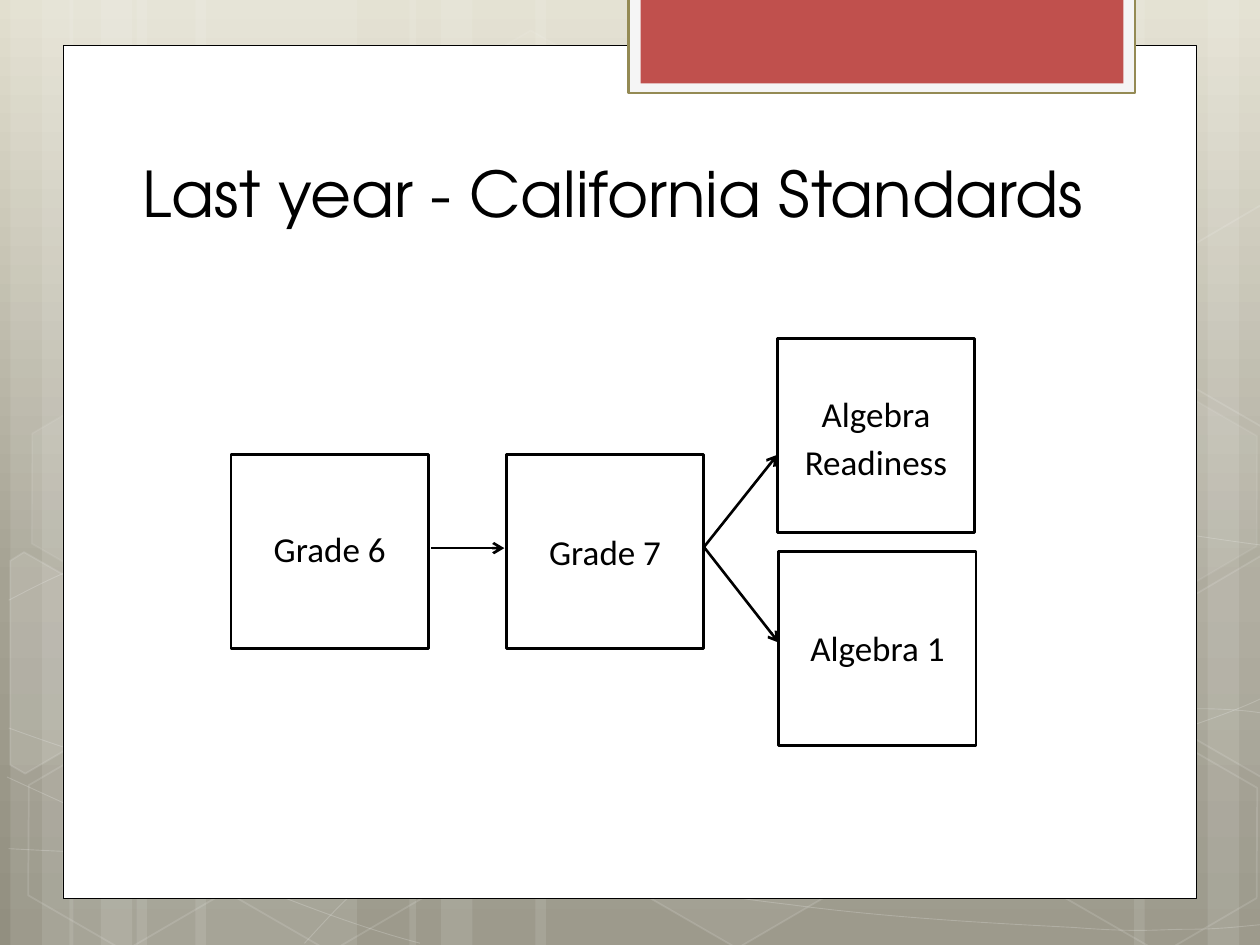
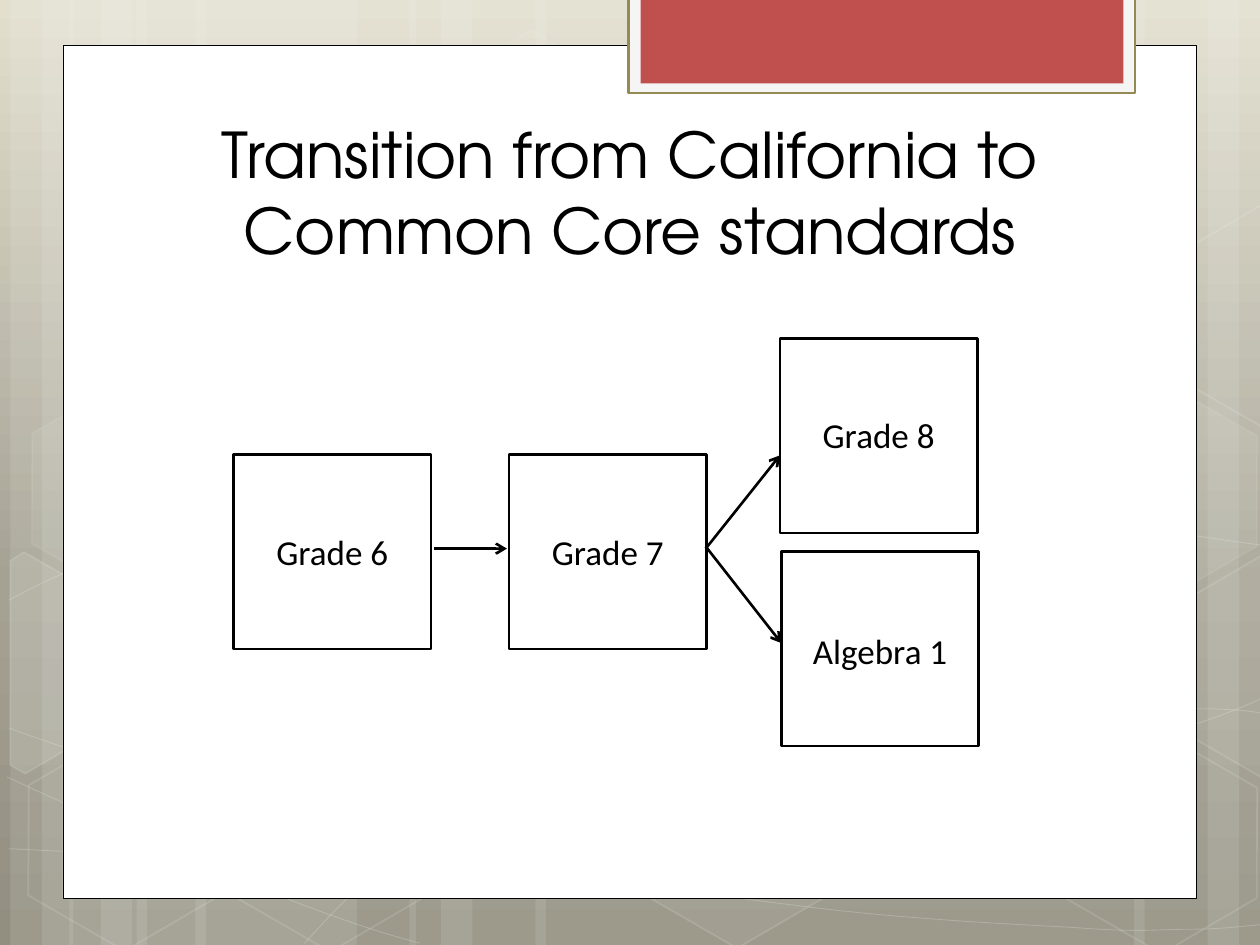
from copy import deepcopy
from dataclasses import dataclass
from math import cos, radians, sin

from lxml.etree import SubElement
from pptx import Presentation
from pptx.dml.color import RGBColor
from pptx.enum.shapes import MSO_CONNECTOR as Connector, MSO_SHAPE as Shape
from pptx.enum.text import MSO_ANCHOR as Anchor, MSO_AUTO_SIZE as AutoSize, PP_ALIGN as Align
from pptx.oxml.ns import qn
from pptx.util import Pt


@dataclass(frozen=True)
class Theme:
    ink: str = "000000"
    paper: str = "FFFFFF"
    tab_frame: str = "F5F5F5"
    tab_edge: str = "948A54"
    tab: str = "C0504D"
    backdrop: tuple = ((0, "E2DFCF"), (0.62, "A5A293"), (1, "928F80"))
    title_font: str = "TeX Gyre Adventor"
    title_size: float = 36
    box_font: str = "Calibri"
    box_size: float = 20


WIDTH, HEIGHT = 720, 540
BOX_WIDTH, BOX_HEIGHT = 112.8, 111
TILT = 30
STRIPS = ((72, 126), (0, 36), (18, 60))
WIDE_STRIPS = ((72, 222), (0, 36), (18, 60))

CURVES = (
    ((5, 485), (44, 487), (83, 489), (137, 488), (191, 487), (258, 486), (330, 479),
     (402, 472), (504, 458), (570, 444), (636, 431), (703, 409), (725, 397)),
    ((5, 343), (26, 332), (47, 321), (87, 310), (128, 300), (186, 284), (250, 279),
     (314, 274), (392, 273), (471, 279), (550, 284), (682, 307), (725, 312)),
    ((4, 444), (91, 484), (178, 523), (240, 539)),
    ((5, 416), (27, 424), (50, 432), (92, 444), (134, 454), (197, 472), (257, 485),
     (317, 497), (392, 510), (452, 517), (512, 525), (576, 528), (614, 530),
     (652, 533), (662, 531), (680, 531), (699, 531), (712, 529), (725, 528)),
    ((174, 539), (187, 525), (200, 510), (217, 498), (235, 485), (259, 470), (279, 460),
     (300, 450), (312, 446), (338, 438), (364, 431), (413, 421), (438, 416),
     (464, 411), (467, 411), (490, 410), (512, 408), (547, 405), (572, 405),
     (597, 404), (638, 405), (638, 405), (654, 405), (670, 405), (686, 405),
     (699, 405), (711, 406), (718, 407), (724, 408), (722, 407), (724, 408)),
)

HEXAGONS = (
    (240.5, 26, 4, 8), (358, 424, 6, 12), (8, 425.5, None, 12), (10, 224.5, 7, 8),
    (125.5, 426, None, 12), (542, 326, 10, 12), (600.5, 427, None, 12), (600.5, 226, 7, 8),
)
LEFT_PART = ((5.8, 320.4), (13.7, 315.4), (69.1, 347), (68.4, 410.4), (14.4, 442), (5.8, 437))
RIGHT_PART = ((666.7, 349.2), (720.7, 317.5), (726.5, 321), (726.5, 441.4),
              (721.4, 444.2), (666.7, 412.6))
UPPER_PART = tuple((x, y - 200.4) for x, y in RIGHT_PART)
CUT_HEXAGONS = ((LEFT_PART, (25.9, 385.2), 10),
                (RIGHT_PART, (709.2, 374.4), 4),
                (UPPER_PART, (709.2, 174), None))

BOX_PLACES = ((132, 259.6), (289.4, 259.6), (444.2, 193.3), (445, 315))
ARROWS = (((246.4, 313.2), (288.2, 313.2)),
          ((401.8, 313.2), (444.2, 259.9)),
          ((401.8, 312), (445, 367.2)))


def write_text(frame, text, *, font, size, color, align=Align.LEFT, spacing=None):
    frame.word_wrap = True
    frame.auto_size = AutoSize.NONE
    para = frame.paragraphs[0]
    para.alignment = align
    if spacing:
        para.line_spacing = spacing
    span = para.add_run()
    span.text = text
    span.font.name = font
    span.font.size = Pt(size)
    span.font.color.rgb = RGBColor.from_string(color)


def turn_back(points, center):
    cosine, sine = cos(radians(TILT)), sin(radians(TILT))
    middle_x, middle_y = center
    offsets = [(x - middle_x, y - middle_y) for x, y in points]
    return [(middle_x + x * cosine + y * sine, middle_y - x * sine + y * cosine)
            for x, y in offsets]


class SlideWriter:
    def __init__(self, deck, theme):
        self.deck = deck
        self.theme = theme
        self.layout = deck.slide_layouts[5]
        self.slide = None

    def start(self):
        self.slide = self.deck.slides.add_slide(self.layout)

    def paint(self, shape, fill=None, line=None, line_width=1, fill_alpha=None, line_alpha=None):
        shape.shadow.inherit = False
        for part, color in ((shape.fill, fill), (shape.line.fill, line)):
            if color:
                part.solid()
                part.fore_color.rgb = RGBColor.from_string(color)
            else:
                part.background()
        if line:
            shape.line.width = Pt(line_width)
        for query, alpha in (("a:solidFill/a:srgbClr", fill_alpha),
                             ("a:ln/a:solidFill/a:srgbClr", line_alpha)):
            if alpha is not None:
                color = shape.element.spPr.xpath(query)[0]
                SubElement(color, qn("a:alpha")).set("val", str(alpha * 1000))

    def shape(self, kind, left, top, width, height, **style):
        shape = self.slide.shapes.add_shape(kind, Pt(left), Pt(top), Pt(width), Pt(height))
        self.paint(shape, **style)
        return shape

    def outline(self, points, close, **style):
        corners = [(Pt(x), Pt(y)) for x, y in points]
        builder = self.slide.shapes.build_freeform(*corners[0], scale=1.0)
        builder.add_line_segments(corners[1:], close=close)
        outline = builder.convert_to_shape()
        self.paint(outline, **style)
        return outline

    def curve(self, knots):
        curve = self.outline(knots, False, line=self.theme.paper, line_width=0.5, line_alpha=20)
        steps = curve.element.xpath(".//a:lnTo")
        track = steps[0].getparent()
        for first in range(0, len(steps), 3):
            bend = SubElement(track, qn("a:cubicBezTo"))
            for step in steps[first:first + 3]:
                bend.append(step[0])
                track.remove(step)

    def glass(self, alpha):
        return {} if alpha is None else {"fill": self.theme.paper, "fill_alpha": alpha}

    def hexagon(self, left, top, fill_alpha, line_alpha):
        shape = self.shape(Shape.HEXAGON, left, top, 126, 109.4, line=self.theme.paper,
                           line_alpha=line_alpha, **self.glass(fill_alpha))
        shape.adjustments[0] = 0.285
        shape.rotation = TILT

    def cut_hexagon(self, points, center, fill_alpha):
        part = self.outline(turn_back(points, center), True, line=self.theme.paper,
                            line_alpha=12, **self.glass(fill_alpha))
        part.rotation = TILT

    def strips(self, origin, strips, mirrored=False):
        for offset, width in strips:
            left = origin - offset - width if mirrored else origin + offset
            strip = self.shape(Shape.RECTANGLE, left, 0, width, HEIGHT, **self.glass(10))
            strip.rotation = 180 if mirrored else 0

    def title(self, text, left, top, width, height, align):
        title = self.slide.shapes.title
        title.left, title.top, title.width, title.height = map(Pt, (left, top, width, height))
        title.text_frame.vertical_anchor = Anchor.BOTTOM
        write_text(title.text_frame, text, font=self.theme.title_font,
                   size=self.theme.title_size, color=self.theme.ink, align=align)

    def course_box(self, text, left, top, lift):
        box = self.shape(Shape.RECTANGLE, left, top, BOX_WIDTH, BOX_HEIGHT,
                         fill=self.theme.paper, line=self.theme.ink, line_width=1.5)
        frame = box.text_frame
        frame.vertical_anchor = Anchor.MIDDLE
        frame.margin_bottom = Pt(3.6 + lift)
        write_text(frame, text, font=self.theme.box_font, size=self.theme.box_size,
                   color=self.theme.ink, align=Align.CENTER, spacing=1.15)

    def arrow(self, start, end):
        arrow = self.slide.shapes.add_connector(
            Connector.STRAIGHT, *(Pt(value) for value in (*start, *end)))
        arrow.line.color.rgb = RGBColor.from_string(self.theme.ink)
        arrow.line.width = Pt(1.5)
        properties = arrow.element.spPr
        SubElement(properties.find(qn("a:ln")), qn("a:tailEnd")).set("type", "arrow")
        SubElement(properties, qn("a:effectLst"))

    def backdrop(self):
        fill = self.layout.background.fill
        fill.gradient()
        fill.gradient_angle = 270
        stops = self.layout.element.xpath(".//a:gsLst")[0]
        stops.append(deepcopy(stops[0]))
        for stop, (position, color) in zip(fill.gradient_stops, self.theme.backdrop):
            stop.position = position
            stop.color.rgb = RGBColor.from_string(color)

    def scenery(self):
        theme = self.theme
        self.strips(6, STRIPS)
        self.strips(39.6, STRIPS)
        self.strips(726, STRIPS, mirrored=True)
        self.strips(234, WIDE_STRIPS)
        for knots in CURVES:
            self.curve(knots)
        for hexagon in HEXAGONS:
            self.hexagon(*hexagon)
        for cut_hexagon in CUT_HEXAGONS:
            self.cut_hexagon(*cut_hexagon)
        self.shape(Shape.RECTANGLE, 36, 26, 648, 487.2, fill=theme.paper,
                   line=theme.ink, line_width=0.5)
        self.shape(Shape.RECTANGLE, 359.2, -1.4, 289.6, 54.7, fill=theme.tab_frame,
                   line=theme.tab_edge, line_width=1.25)
        self.shape(Shape.RECTANGLE, 366, -1.4, 276, 49, fill=theme.tab)

    def share_scenery(self):
        self.backdrop()
        self.scenery()
        tree = self.layout.shapes.element
        shapes = [shape for shape in self.slide.shapes if not shape.is_placeholder]
        for index, shape in enumerate(shapes):
            shape.element.xpath(".//p:cNvPr")[0].set("id", str(100 + index))
            tree.insert(2 + index, shape.element)

    def pathway(self, courses, shift_x=0, shift_y=0):
        for (text, lift), (left, top) in zip(courses, BOX_PLACES):
            self.course_box(text, left + shift_x, top + shift_y, lift)
        for ends in ARROWS:
            self.arrow(*((x + shift_x, y + shift_y) for x, y in ends))


def main():
    deck = Presentation()
    deck.slide_width, deck.slide_height = Pt(WIDTH), Pt(HEIGHT)
    writer = SlideWriter(deck, Theme())

    writer.start()
    writer.share_scenery()
    writer.title("Last year - California Standards", 74.2, 78.2, 571.7, 57, Align.LEFT)
    writer.pathway((("Grade 6", 7), ("Grade 7", 4), ("Algebra Readiness", 1), ("Algebra 1", 4)))

    writer.start()
    writer.title("Transition from California to Common Core standards",
                 83.5, 66.2, 553, 90, Align.CENTER)
    writer.pathway((("Grade 6", 4), ("Grade 7", 4), ("Grade 8", 5), ("Algebra 1", 2)),
                   shift_x=1.5, shift_y=0.3)

    deck.save("out.pptx")


if __name__ == "__main__":
    main()
